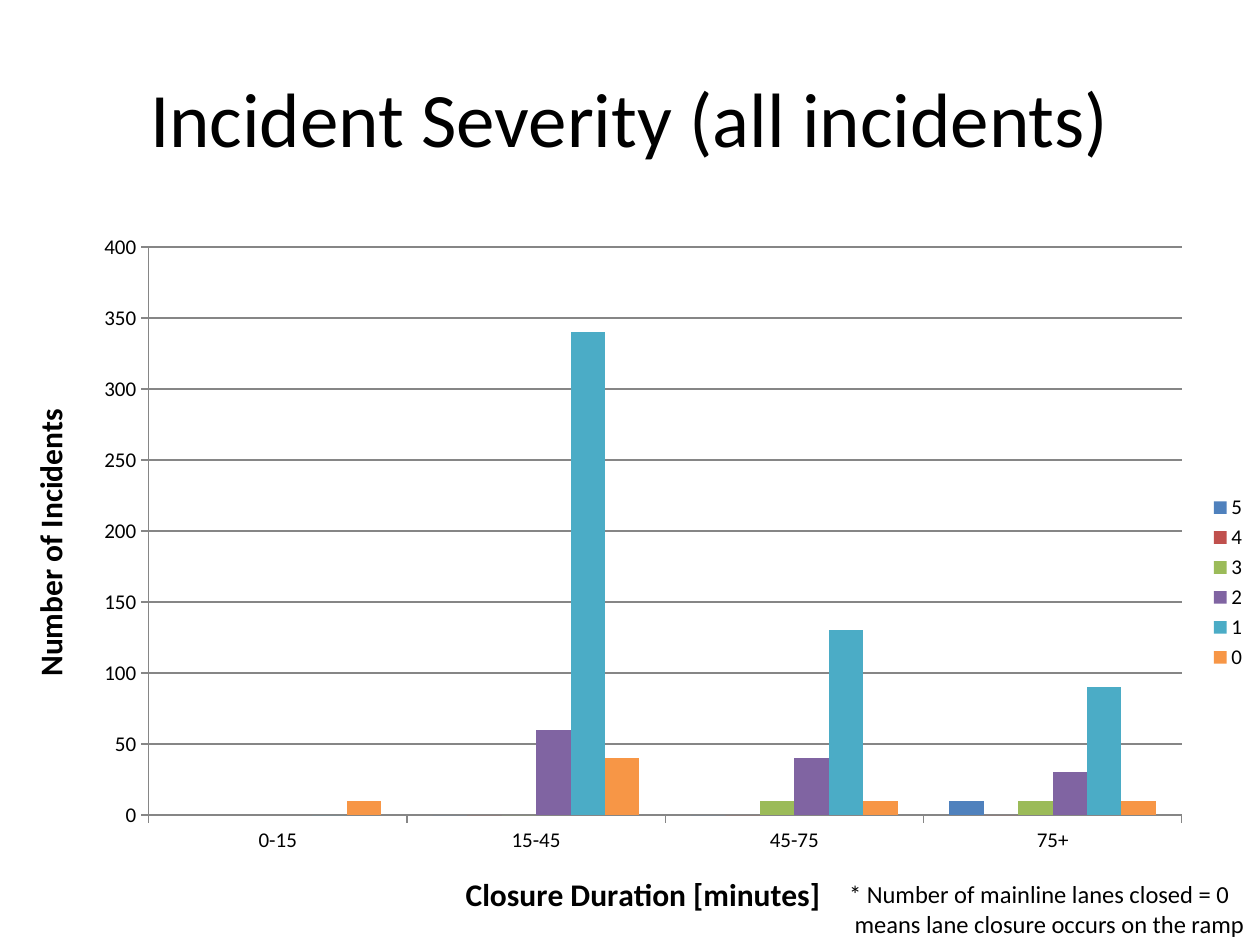
from lxml import etree
from pptx import Presentation
from pptx.chart.data import CategoryChartData
from pptx.dml.color import RGBColor
from pptx.enum.chart import XL_CHART_TYPE, XL_LEGEND_POSITION, XL_TICK_MARK
from pptx.enum.text import MSO_ANCHOR, PP_ALIGN
from pptx.oxml.ns import qn
from pptx.util import Pt

PX = 9144  # EMU in one px, at 100 px to the inch
FONT = "Calibri"
BLACK = RGBColor(0x00, 0x00, 0x00)
GRAY = RGBColor(0x86, 0x86, 0x86)

DURATIONS = ["0-15", "15-45", "45-75", "75+"]
# Lanes closed, incidents for each duration, colour
LANES = [
    ("5", (None, 0, 0, 10), RGBColor(0x4F, 0x81, 0xBD)),
    ("4", (None, 0, 0, 0), RGBColor(0xC0, 0x50, 0x4D)),
    ("3", (None, 0, 10, 10), RGBColor(0x9B, 0xBB, 0x59)),
    ("2", (None, 60, 40, 30), RGBColor(0x80, 0x64, 0xA2)),
    ("1", (0, 340, 130, 90), RGBColor(0x4B, 0xAC, 0xC6)),
    ("0", (10, 40, 10, 10), RGBColor(0xF7, 0x96, 0x46)),
]
NOTE = ["* Number of mainline lanes closed = 0",
        " means lane closure occurs on the ramp"]


def emu(box):
    return [length * PX for length in box]


def set_font(font, size, bold=False):
    font.name = FONT
    font.size = Pt(size)
    font.bold = bold
    font.color.rgb = BLACK


def set_layout(element, index, box, place):
    """Place a chart part at x, y (and w, h) in px within the chart's box."""
    for old in element.findall(qn("c:layout")):
        element.remove(old)
    layout = etree.Element(qn("c:layout"))
    manual = etree.SubElement(layout, qn("c:manualLayout"))
    if len(place) == 4:
        etree.SubElement(manual, qn("c:layoutTarget"), val="inner")
    for side in ("x", "y"):
        etree.SubElement(manual, qn(f"c:{side}Mode"), val="edge")
    for name, length, whole in zip("xywh", place, box[2:] * 2):
        etree.SubElement(manual, qn(f"c:{name}"), val=str(length / whole))
    element.insert(index, layout)


def add_title(page, box):
    title = page.shapes.title
    title.left, title.top, title.width, title.height = emu(box)
    title.text_frame.text = "Incident Severity (all incidents)"
    title.text_frame.vertical_anchor = MSO_ANCHOR.MIDDLE
    para = title.text_frame.paragraphs[0]
    para.alignment = PP_ALIGN.CENTER
    set_font(para.font, 44)


def format_axis(axis, text, box, place):
    frame = axis.axis_title.text_frame
    frame.text = text
    set_font(frame.paragraphs[0].font, 18, bold=True)
    set_layout(axis.axis_title._element, 1, box, place)
    set_font(axis.tick_labels.font, 12)
    axis.major_tick_mark = XL_TICK_MARK.OUTSIDE
    axis.minor_tick_mark = XL_TICK_MARK.NONE
    axis.format.line.color.rgb = GRAY


def add_incident_chart(page, box):
    data = CategoryChartData()
    data.categories = DURATIONS
    for name, counts, _ in LANES:
        data.add_series(name, counts)
    chart = page.shapes.add_chart(
        XL_CHART_TYPE.COLUMN_CLUSTERED, *emu(box), data).chart
    set_font(chart.font, 10)
    chart.has_title = False

    # Columns
    plot = chart.plots[0]
    plot.gap_width = 150
    plot.overlap = 0
    plot.vary_by_categories = False
    for series, (_, _, color) in zip(plot.series, LANES):
        series.format.fill.solid()
        series.format.fill.fore_color.rgb = color
    plot_area = chart._chartSpace.chart.plotArea
    set_layout(plot_area, 0, box, (118, 21, 820, 451))

    # Axes
    format_axis(chart.category_axis, "Closure Duration [minutes]",
                box, (365, 513))
    counts_axis = chart.value_axis
    format_axis(counts_axis, "Number of Incidents", box, (18, 145))
    counts_axis.minimum_scale = 0
    counts_axis.maximum_scale = 400
    counts_axis.major_unit = 50
    counts_axis.has_major_gridlines = True
    counts_axis.major_gridlines.format.line.color.rgb = GRAY

    # Legend
    chart.has_legend = True
    legend = chart.legend
    legend.position = XL_LEGEND_POSITION.RIGHT
    legend.include_in_layout = False
    set_font(legend.font, 12)
    set_layout(legend._element, 1, box, (958, 214))


def add_note(page, box):
    frame = page.shapes.add_textbox(*emu(box)).text_frame
    frame.word_wrap = False
    frame.text = "\n".join(NOTE)
    for para in frame.paragraphs:
        set_font(para.font, 14)


def main():
    deck = Presentation()
    deck.slide_width, deck.slide_height = emu((1000, 750))
    page = deck.slides.add_slide(deck.slide_layouts[5])
    add_title(page, (50, 30, 900, 125))
    add_incident_chart(page, (0, 175, 1000, 575))
    add_note(page, (664, 693, 336, 57))
    deck.save("out.pptx")


if __name__ == "__main__":
    main()
